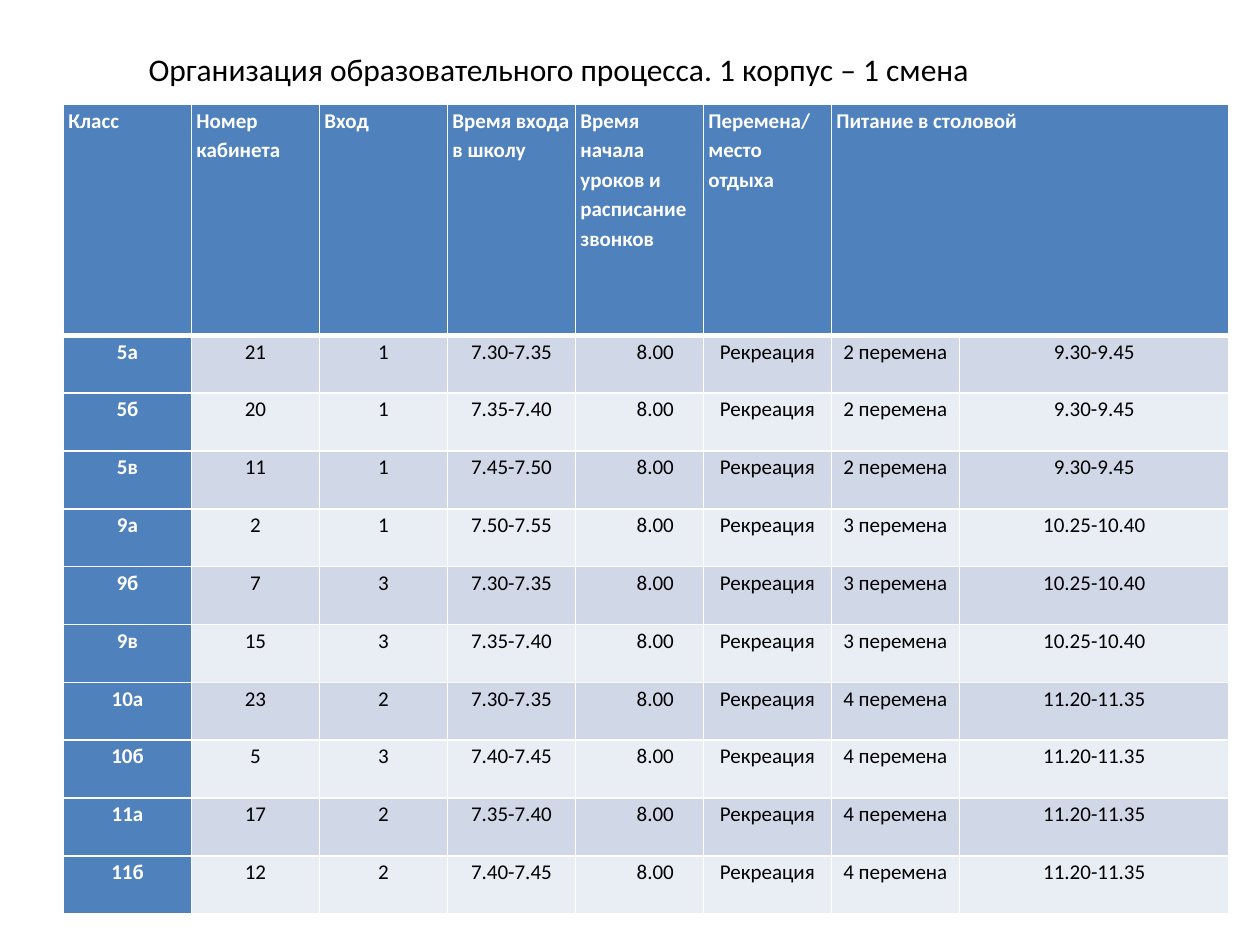
"""Build the slide with the timetable of classes for the first shift."""
from lxml.etree import SubElement
from pptx import Presentation
from pptx.dml.color import RGBColor as Rgb
from pptx.enum.text import MSO_ANCHOR as Anchor, PP_ALIGN as Align
from pptx.oxml.ns import qn
from pptx.util import Cm, Pt

COLORS = {
    "header": "4F81BD",
    "odd": "D0D8E8",
    "even": "E9EDF4",
    "white": "FFFFFF",
    "black": "000000",
}
FONT = "Calibri"
HEADERS = [
    "Класс",
    "Номер кабинета",
    "Вход",
    "Время входа в школу",
    "Время начала уроков и\nрасписание звонков",
    "Перемена/место отдыха",
    "Питание в столовой",
    "",
]
MEALS = {2: "9.30-9.45", 3: "10.25-10.40", 4: "11.20-11.35"}
CLASSES = [
    ("5а", "21", "1", "7.30-7.35", 2),
    ("5б", "20", "1", "7.35-7.40", 2),
    ("5в", "11", "1", "7.45-7.50", 2),
    ("9а", "2", "1", "7.50-7.55", 3),
    ("9б", "7", "3", "7.30-7.35", 3),
    ("9в", "15", "3", "7.35-7.40", 3),
    ("10а", "23", "2", "7.30-7.35", 4),
    ("10б", "5", "3", "7.40-7.45", 4),
    ("11а", "17", "2", "7.35-7.40", 4),
    ("11б", "12", "2", "7.40-7.45", 4),
]
START_COLUMN = 4
WIDTH, HEIGHT = 23.5, 16.31
COLUMN_WIDTH, HEADER_HEIGHT = 2.58, 4.65


def style_font(font, size, color, bold=False):
    font.name = FONT
    font.size = Pt(size)
    font.bold = bold
    font.color.rgb = Rgb.from_string(COLORS[color])


def add_borders(cell, top, bottom):
    properties = cell._tc.get_or_add_tcPr()
    for side, width in (("L", 1), ("R", 1), ("T", top), ("B", bottom)):
        line = SubElement(properties, qn(f"a:ln{side}"), w=str(Pt(width)))
        fill = SubElement(line, qn("a:solidFill"))
        SubElement(fill, qn("a:srgbClr"), val=COLORS["white"])


deck = Presentation()
deck.slide_width, deck.slide_height = Cm(25.4), Cm(19.05)
page = deck.slides.add_slide(deck.slide_layouts[5])

title = page.shapes.title
title.left, title.top, title.width, title.height = Cm(2.74), Cm(0.89), Cm(17.25), Cm(1.02)
frame = title.text_frame
frame.text = "Организация образовательного процесса. 1 корпус – 1 смена"
frame.word_wrap = False
frame.vertical_anchor = Anchor.TOP
frame.paragraphs[0].alignment = Align.LEFT
style_font(frame.paragraphs[0].runs[0].font, 18, "black")

rows = [HEADERS]
for name, room, entrance, arrival, lesson_break in CLASSES:
    rows.append([name, room, entrance, arrival, "8.00", "Рекреация",
                 f"{lesson_break} перемена", MEALS[lesson_break]])

table = page.shapes.add_table(
    len(rows), len(HEADERS), Cm(1.28), Cm(2.11), Cm(WIDTH), Cm(HEIGHT)
).table
for column in table.columns:
    column.width = Cm(COLUMN_WIDTH)
table.columns[7].width = Cm(WIDTH - 7 * COLUMN_WIDTH)
for row in table.rows:
    row.height = Cm((HEIGHT - HEADER_HEIGHT) / len(CLASSES))
table.rows[0].height = Cm(HEADER_HEIGHT)
table.cell(0, 6).merge(table.cell(0, 7))

for row_index, values in enumerate(rows):
    is_header = row_index == 0
    band = "odd" if row_index % 2 else "even"
    for column_index, value in enumerate(values):
        cell = table.cell(row_index, column_index)
        is_strong = is_header or column_index == 0
        add_borders(cell, 3 if row_index == 1 else 1, 3 if is_header else 1)
        cell.fill.solid()
        cell.fill.fore_color.rgb = Rgb.from_string(COLORS["header" if is_strong else band])
        cell.margin_left = cell.margin_right = Cm(0.1)
        cell.margin_top = cell.margin_bottom = 0
        cell.text_frame.text = value
        for para in cell.text_frame.paragraphs:
            para.alignment = Align.LEFT if is_header else Align.CENTER
            para.line_spacing = 1.15
            if column_index == START_COLUMN and not is_header:
                para._p.get_or_add_pPr().set("marL", str(Cm(0.64)))
            for span in para.runs:
                style_font(span.font, 12, "white" if is_strong else "black", is_strong)

deck.save("out.pptx")
